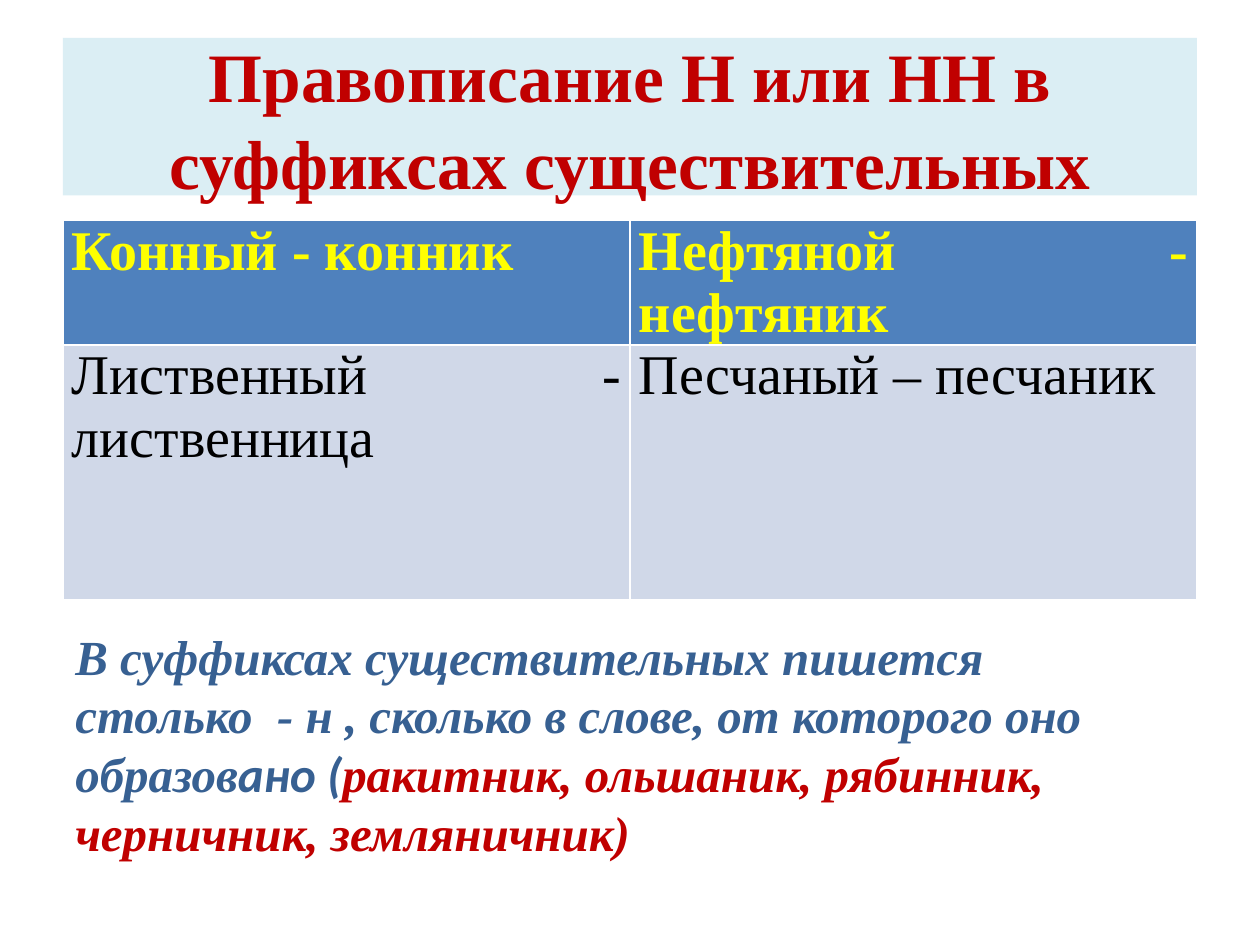
from dataclasses import dataclass

from pptx import Presentation, util as u
from pptx.dml.color import RGBColor
from pptx.enum import shapes, text

Inches = u.Inches
SERIF = "Times New Roman"
RED = "C00000"
BLUE = "376092"


@dataclass
class RowStyle:
    words: tuple[str, str]
    height: float
    fill: str
    color: str
    bold: bool


@dataclass
class Part:
    words: str
    color: str
    name: str = SERIF


ROWS = [
    RowStyle(("Конный - конник", "Нефтяной - нефтяник"), 0.98, "4F81BD", "FFFF00", True),
    RowStyle(("Лиственный - лиственница", "Песчаный – песчаник"), 2.02, "D0D8E8", "000000", False),
]

RULE = [
    Part("В суффиксах существительных пишется столько  - н , "
         "сколько в слове, от которого оно образов", BLUE),
    Part("ано (", BLUE, "Calibri"),
    Part("ракитник, ольшаник, рябинник, черничник, земляничник)", RED),
]


def rgb(color: str) -> RGBColor:
    return RGBColor.from_string(color)


def paint(target, color: str) -> None:
    target.fill.solid()
    target.fill.fore_color.rgb = rgb(color)


def set_font(font, size: float, color: str, bold: bool) -> None:
    font.name = SERIF
    font.size = u.Pt(size)
    font.bold = bold
    font.color.rgb = rgb(color)


def add_title(page, words: str) -> None:
    box = page.shapes.add_shape(shapes.MSO_SHAPE.RECTANGLE,
                                Inches(0.5), Inches(0.3), Inches(9), Inches(1.25))
    box.shadow.inherit = False
    paint(box, "DBEEF4")
    box.line.fill.background()
    frame = box.text_frame
    frame.word_wrap = True
    frame.vertical_anchor = text.MSO_ANCHOR.MIDDLE
    para = frame.paragraphs[0]
    para.text = words
    para.alignment = text.PP_ALIGN.CENTER
    para.line_spacing = 1.04
    set_font(para.font, 39.6, RED, True)


def add_examples(page, rows: list[RowStyle]) -> None:
    table = page.shapes.add_table(len(rows), 2, Inches(0.5), Inches(1.75), Inches(9),
                                  Inches(sum(row.height for row in rows))).table
    for index, style in enumerate(rows):
        table.rows[index].height = Inches(style.height)
        for cell, words in zip(table.rows[index].cells, style.words):
            paint(cell, style.fill)
            cell.margin_left = cell.margin_right = Inches(0.07)
            cell.margin_top = cell.margin_bottom = 0
            para = cell.text_frame.paragraphs[0]
            para.text = words
            para.alignment = text.PP_ALIGN.JUSTIFY
            set_font(para.font, 32, style.color, style.bold)


def add_rule(page, parts: list[Part]) -> None:
    box = page.shapes.add_textbox(Inches(0.5), Inches(4.92), Inches(8.5), Inches(2.46))
    box.text_frame.word_wrap = True
    para = box.text_frame.paragraphs[0]
    para.font.size = u.Pt(28)
    para.font.bold = para.font.italic = True
    for part in parts:
        span = para.add_run()
        span.text = part.words
        span.font.name = part.name
        span.font.color.rgb = rgb(part.color)


def main() -> None:
    deck = Presentation()
    deck.slide_width, deck.slide_height = Inches(10), Inches(7.5)
    page = deck.slides.add_slide(deck.slide_layouts[6])

    # Heading band
    add_title(page, "Правописание Н или НН в суффиксах существительных")
    # Word pairs
    add_examples(page, ROWS)
    # Spelling rule
    add_rule(page, RULE)

    deck.save("out.pptx")


if __name__ == "__main__":
    main()
